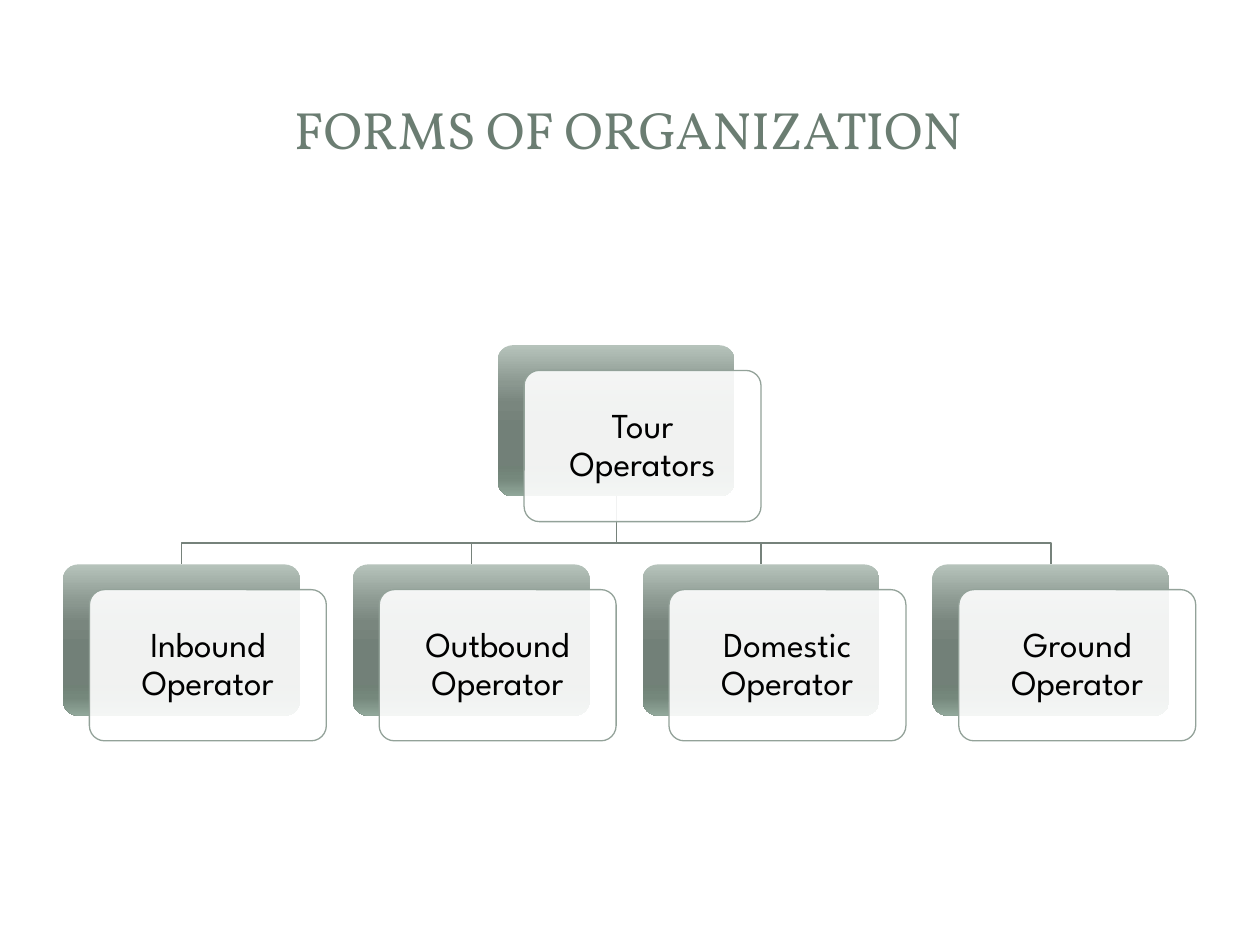
from lxml.etree import SubElement
from pptx import Presentation
from pptx.dml.color import RGBColor
from pptx.enum.shapes import MSO_SHAPE
from pptx.enum.text import MSO_ANCHOR, PP_ALIGN
from pptx.oxml import parse_xml
from pptx.oxml.ns import nsdecls, qn
from pptx.util import Inches, Pt

TITLE = "FORMS OF ORGANIZATION"
ROOT = "Tour Operators"
KINDS = ["Inbound Operator", "Outbound Operator", "Domestic Operator", "Ground Operator"]

COLORS = {"title": "6B7D72", "text": "000000", "card": "FFFFFF",
          "edge": "93A299", "link": "76827B"}
SHADES = [(0, "B6C3BB"), (25, "8B9890"), (38, "79867E"), (55, "728078"),
          (80, "708176"), (88, "75887C"), (100, "91A79A")]

# Chart measures in inches
LEFT, PITCH = 0.5, 2.3
WIDE, HIGH = 1.88, 1.2
ROOT_TOP, KIND_TOP, BUS = 2.74, 4.48, 4.31
SHIFT_X, SHIFT_Y = 0.21, 0.2


def rgb(name):
    return RGBColor.from_string(COLORS[name])


def write(shape, text, font, size, color):
    frame = shape.text_frame
    frame.word_wrap = True
    frame.vertical_anchor = MSO_ANCHOR.MIDDLE
    para = frame.paragraphs[0]
    para.text = text
    para.alignment = PP_ALIGN.CENTER
    para.font.name, para.font.size = font, Pt(size)
    para.font.color.rgb = rgb(color)
    return frame


def add_round(slide, x, y):
    box = slide.shapes.add_shape(MSO_SHAPE.ROUNDED_RECTANGLE, Inches(x), Inches(y),
                                 Inches(WIDE), Inches(HIGH))
    box.adjustments[0] = 0.1
    box.shadow.inherit = False
    return box


def add_node(slide, text, x, y):
    # Shaded plate behind
    plate = add_round(slide, x, y)
    plate.line.fill.background()
    stops = "".join(f'<a:gs pos="{pos * 1000}"><a:srgbClr val="{color}"/></a:gs>'
                    for pos, color in SHADES)
    grad = parse_xml(f'<a:gradFill {nsdecls("a")} rotWithShape="1"><a:gsLst>{stops}</a:gsLst>'
                     '<a:lin ang="5400000" scaled="0"/></a:gradFill>')
    plate.element.spPr.find(qn("a:prstGeom")).addnext(grad)

    # Translucent card in front
    card = add_round(slide, x + SHIFT_X, y + SHIFT_Y)
    card.fill.solid()
    card.fill.fore_color.rgb = rgb("card")
    tint = card.element.spPr.find(qn("a:solidFill"))[0]
    SubElement(tint, qn("a:alpha"), val="90000")
    card.line.color.rgb = rgb("edge")
    card.line.width = Pt(0.75)
    frame = write(card, text, "League Spartan", 20, "text")
    frame.margin_left = frame.margin_right = Inches(0.08)
    frame.margin_top = frame.margin_bottom = Inches(0.08)
    frame.paragraphs[0].line_spacing = 0.9


def add_link(slide, start, end):
    points = [start, (start[0], BUS), (end[0], BUS), end]
    first, *rest = [(Inches(x), Inches(y)) for x, y in points]
    path = slide.shapes.build_freeform(*first)
    path.add_line_segments(rest, close=False)
    link = path.convert_to_shape()
    link.shadow.inherit = False
    link.fill.background()
    link.line.color.rgb = rgb("link")
    link.line.width = Pt(0.75)


def main():
    deck = Presentation()
    deck.slide_width, deck.slide_height = Inches(10), Inches(7.5)
    slide = deck.slides.add_slide(deck.slide_layouts[6])

    # Title
    title = slide.shapes.add_textbox(Inches(0.47), Inches(0.45), Inches(9.03), Inches(1.14))
    write(title, TITLE, "Vollkorn", 30, "title")

    # Links first, so that the nodes cover their ends
    lefts = [LEFT + i * PITCH for i in range(len(KINDS))]
    root = (lefts[0] + lefts[-1]) / 2
    half = WIDE / 2
    for x in reversed(lefts):
        add_link(slide, (root + half, ROOT_TOP + HIGH), (x + half, KIND_TOP))

    # Nodes
    add_node(slide, ROOT, root, ROOT_TOP)
    for text, x in zip(KINDS, lefts):
        add_node(slide, text, x, KIND_TOP)

    deck.save("out.pptx")


if __name__ == "__main__":
    main()
